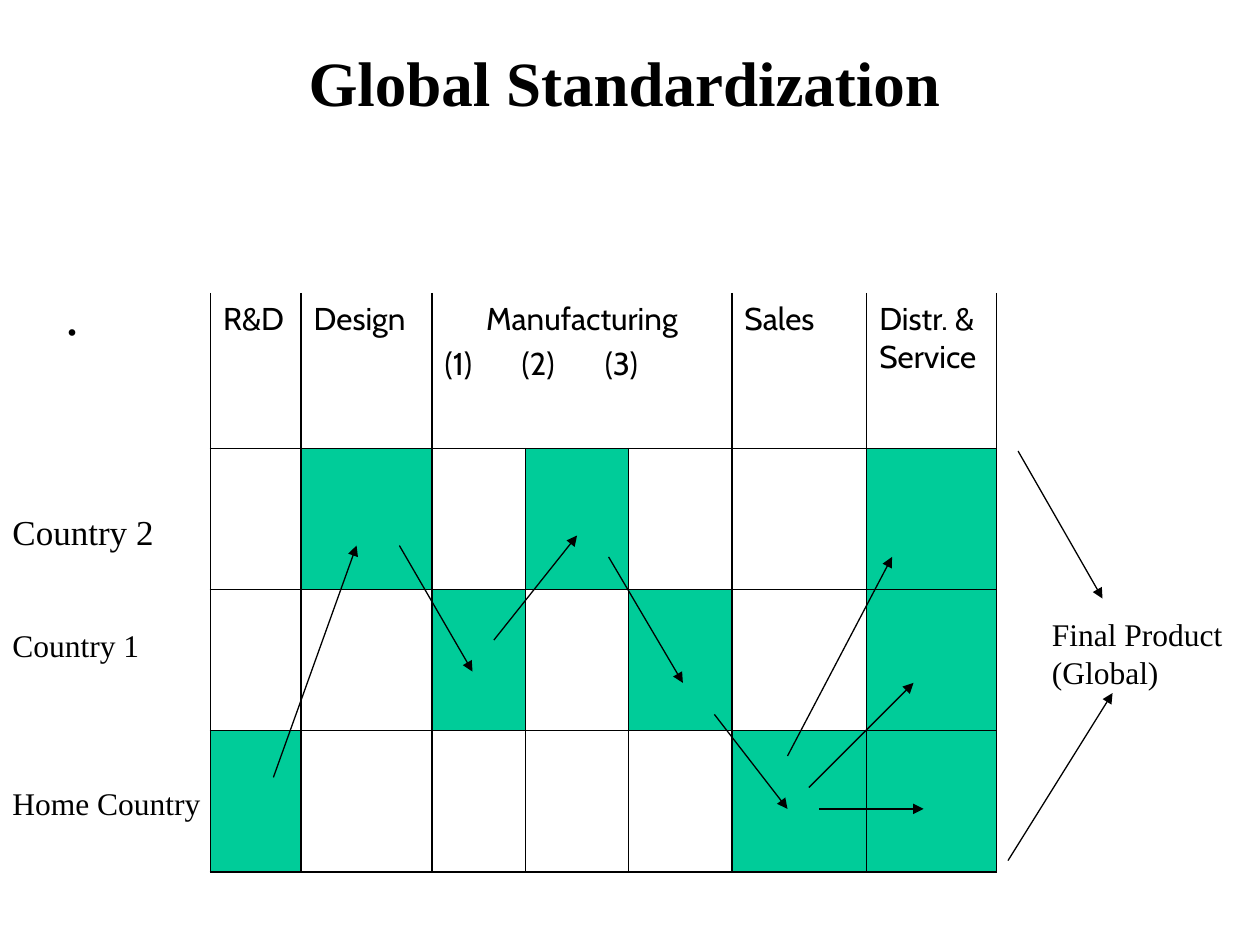
import pptx
import pptx.util
import pptx.dml.color
import pptx.enum.shapes
import pptx.enum.text
import pptx.oxml
import pptx.oxml.ns
from lxml import etree

Inches, Pt = pptx.util.Inches, pptx.util.Pt
BLACK, GREEN = "000000", "00CC99"


def rgb(hex_code):
    return pptx.dml.color.RGBColor.from_string(hex_code)


def style(paragraph, size, font="Times New Roman", bold=False):
    for run in paragraph.runs:
        run.font.name = font
        run.font.size = Pt(size)
        run.font.bold = bold
        run.font.color.rgb = rgb(BLACK)


deck = pptx.Presentation()
deck.slide_width, deck.slide_height = Inches(10), Inches(7.5)
slide = deck.slides.add_slide(deck.slide_layouts[6])

# Title, body text and labels: text, left, top, width, height, size, wrap
texts = [
    ("Global Standardization", 2.35, 0.34, 7.08, 0.68, 36, True),
    (".", 0.42, 2.17, 9.58, 5.08, 32, True),
    ("Home Country", 0, 6.17, 1.75, 0.4, 18, True),
    ("Country 1", 0, 4.92, 1.21, 0.4, 18, False),
    ("Country 2", 0, 4, 1.32, 0.43, 20, False),
    ("Final Product (Global)", 8.25, 4.83, 1.75, 0.7, 18, True),
]
for text, left, top, width, height, size, wrap in texts:
    label = slide.shapes.add_textbox(Inches(left), Inches(top), Inches(width), Inches(height))
    frame = label.text_frame
    frame.word_wrap = wrap
    frame.text = text
    is_title = size == 36
    style(frame.paragraphs[0], size, bold=is_title)
    if is_title:
        frame.vertical_anchor = pptx.enum.text.MSO_ANCHOR.MIDDLE
        frame.paragraphs[0].line_spacing = 0.9

# Value chain by country
column_widths = [0.72, 1.04, 0.74, 0.82, 0.82, 1.07, 1.03]
row_heights = [1.23, 1.12, 1.12, 1.12]
headings = {0: "R&D", 1: "Design", 2: "Manufacturing\n(1)\t(2)\t(3)", 5: "Sales", 6: "Distr. & Service"}
active_stages = {1: (1, 3, 6), 2: (2, 4, 6), 3: (0, 5, 6)}

chain = slide.shapes.add_table(
    len(row_heights), len(column_widths), Inches(1.67), Inches(2.33),
    Inches(sum(column_widths)), Inches(sum(row_heights))).table
chain.first_row = chain.horz_banding = False
for column, width in zip(chain.columns, column_widths):
    column.width = Inches(width)
for row, height in zip(chain.rows, row_heights):
    row.height = Inches(height)
chain.cell(0, 2).merge(chain.cell(0, 4))

for r in range(len(row_heights)):
    for c in range(len(column_widths)):
        cell = chain.cell(r, c)
        if cell.is_spanned:
            continue
        properties = cell._tc.get_or_add_tcPr()
        for side in "LRTB" if r else "LRB":
            properties.append(pptx.oxml.parse_xml(
                f'<a:ln{side} {pptx.oxml.ns.nsdecls("a")} w="12700"><a:solidFill>'
                f'<a:srgbClr val="{BLACK}"/></a:solidFill></a:ln{side}>'))
        if c in active_stages.get(r, ()):
            cell.fill.solid()
            cell.fill.fore_color.rgb = rgb(GREEN)
        else:
            cell.fill.background()
        if r == 0:
            cell.text_frame.text = headings[c]
            for paragraph in cell.text_frame.paragraphs:
                style(paragraph, 18, "Cabin")

stage_title, stage_numbers = chain.cell(0, 2).text_frame.paragraphs
stage_title.alignment = pptx.enum.text.PP_ALIGN.CENTER
stage_numbers.space_before = Pt(3.6)
tabs = etree.SubElement(stage_numbers._p.get_or_add_pPr(), pptx.oxml.ns.qn("a:tabLst"))
for position in (0.61, 1.27):
    etree.SubElement(tabs, pptx.oxml.ns.qn("a:tab"), pos=str(Inches(position)), algn="l")

# Product flow: start x, start y, end x, end y
flows = [
    (8.08, 3.58, 8.75, 4.75),
    (8, 6.83, 8.83, 5.5),
    (2.17, 6.17, 2.83, 4.33),
    (3.17, 4.33, 3.75, 5.33),
    (3.92, 5.08, 4.58, 4.25),
    (4.83, 4.42, 5.42, 5.42),
    (5.67, 5.67, 6.25, 6.42),
    (6.25, 6, 7.08, 4.42),
    (6.42, 6.25, 7.25, 5.42),
    (6.5, 6.42, 7.33, 6.42),
]
for flow in flows:
    arrow = slide.shapes.add_connector(
        pptx.enum.shapes.MSO_CONNECTOR.STRAIGHT, *[Inches(value) for value in flow])
    arrow.line.color.rgb = rgb(BLACK)
    arrow.line.width = Pt(0.75)
    etree.SubElement(arrow.line._get_or_add_ln(), pptx.oxml.ns.qn("a:tailEnd"), type="triangle")
    etree.SubElement(arrow._element.spPr, pptx.oxml.ns.qn("a:effectLst"))

deck.save("out.pptx")
